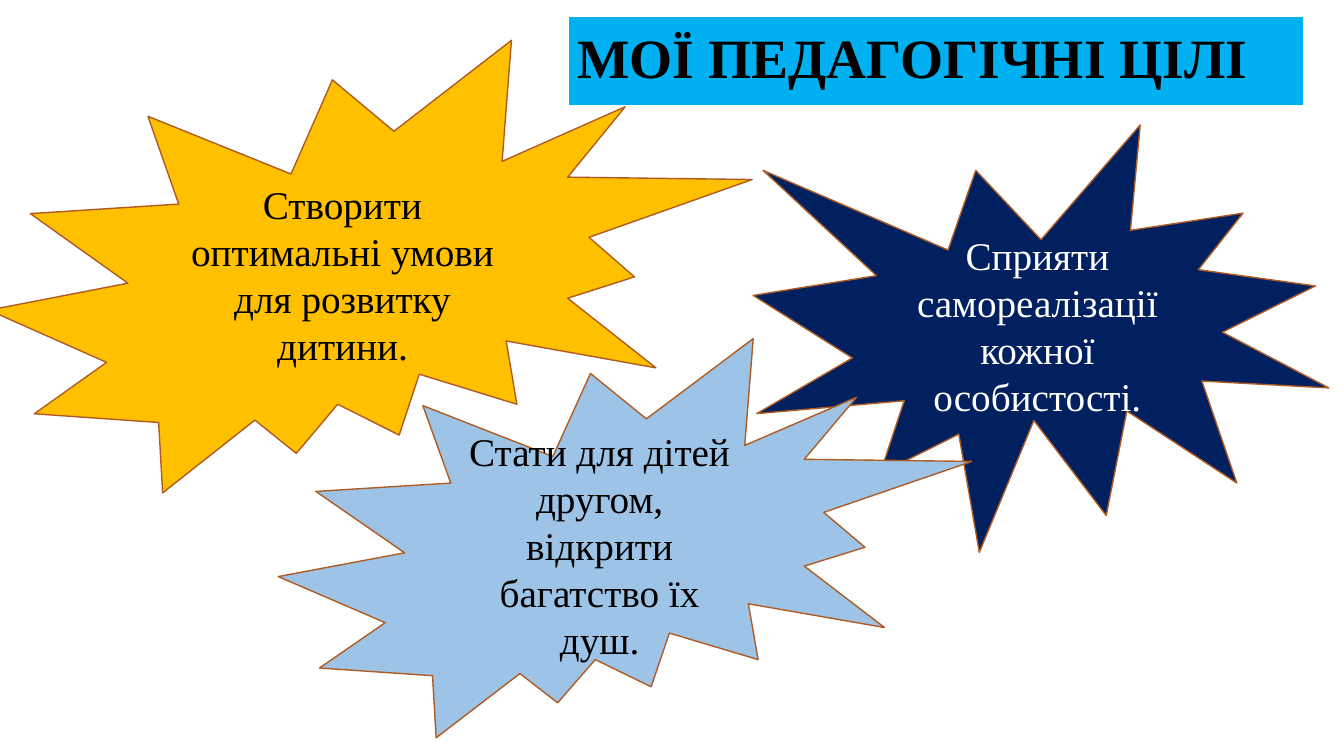
"""Build a slide of pedagogical goals shown as three bursts."""
from pptx import Presentation
from pptx.dml.color import RGBColor
from pptx.enum.shapes import MSO_SHAPE
from pptx.enum.text import MSO_ANCHOR, PP_ALIGN
from pptx.util import Emu, Pt

EMU_PER_PX = 9144
FONT = "Times New Roman"

RECTANGLE = MSO_SHAPE.RECTANGLE
BURST_1 = MSO_SHAPE.EXPLOSION1
BURST_2 = MSO_SHAPE.EXPLOSION2
MIDDLE = MSO_ANCHOR.MIDDLE
LEFT = PP_ALIGN.LEFT
CENTER = PP_ALIGN.CENTER

BLACK = RGBColor(0x00, 0x00, 0x00)
WHITE = RGBColor(0xFF, 0xFF, 0xFF)
CYAN = RGBColor(0x00, 0xB0, 0xF0)
GOLD = RGBColor(0xFF, 0xC0, 0x00)
NAVY = RGBColor(0x00, 0x20, 0x60)
SKY = RGBColor(0x9D, 0xC3, 0xE6)
BROWN = RGBColor(0xAF, 0x5C, 0x24)

GOALS = [
    (BURST_2, (-11, 40, 757, 449), GOLD, BLACK,
     "Створити оптимальні умови для розвитку дитини."),
    (BURST_1, (747, 124, 571, 424), NAVY, WHITE,
     "Сприяти самореалізації кожної особистості."),
    (BURST_2, (276, 336, 688, 396), SKY, BLACK,
     "Стати для дітей другом, відкрити багатство їх душ."),
]


def px(length):
    """Turn a length in px into EMU."""
    return Emu(length * EMU_PER_PX)


def write_text(shape, text, *, size, color, bold=False, align=CENTER, spacing=1.0):
    """Write one formatted paragraph into a shape."""
    frame = shape.text_frame
    frame.word_wrap = True
    frame.vertical_anchor = MIDDLE
    paragraph = frame.paragraphs[0]
    paragraph.alignment = align
    paragraph.line_spacing = spacing
    run = paragraph.add_run()
    run.text = text
    run.font.name = FONT
    run.font.size = Pt(size)
    run.font.bold = bold
    run.font.color.rgb = color


def add_figure(slide, kind, box, *, fill, line, line_width):
    """Add a filled and outlined preset shape."""
    shape = slide.shapes.add_shape(kind, *map(px, box))
    shape.shadow.inherit = False
    shape.fill.solid()
    shape.fill.fore_color.rgb = fill
    shape.line.color.rgb = line
    shape.line.width = Pt(line_width)
    return shape


def add_title(slide, text):
    """Add the title banner."""
    banner = add_figure(slide, RECTANGLE, (563, 16, 730, 89),
                        fill=CYAN, line=WHITE, line_width=1.5)
    write_text(banner, text, size=39.6, color=BLACK, bold=True,
               align=LEFT, spacing=0.9)


def add_goal(slide, kind, box, fill, color, text):
    """Add one goal as a burst with centred text."""
    burst = add_figure(slide, kind, box, fill=fill, line=BROWN, line_width=1)
    write_text(burst, text, size=28, color=color)


def main():
    """Build and save the presentation."""
    presentation = Presentation()
    presentation.slide_width = px(1333)
    presentation.slide_height = px(750)
    slide = presentation.slides.add_slide(presentation.slide_layouts[6])
    add_title(slide, "МОЇ ПЕДАГОГІЧНІ ЦІЛІ")
    for goal in GOALS:
        add_goal(slide, *goal)
    presentation.save("out.pptx")


if __name__ == "__main__":
    main()
